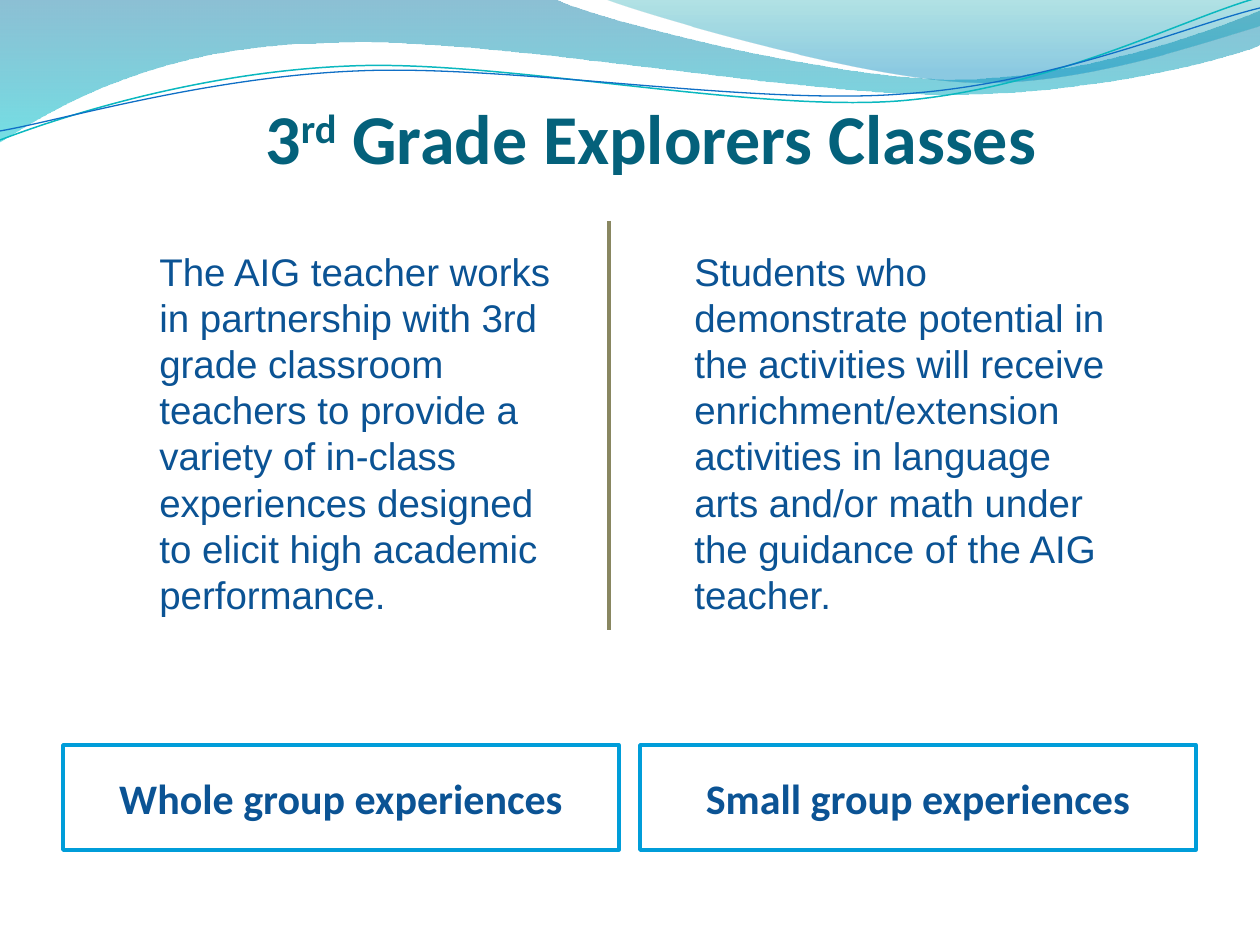
from pptx import Presentation, util as u
from pptx.dml.color import RGBColor
from pptx.enum import shapes, text
from pptx.oxml import parse_xml
from pptx.oxml.ns import nsdecls, qn

# Content
TITLE = [("3", 0), ("rd", 30), (" Grade Explorers Classes", 0)]
COLUMNS = [
    (147, 420, "The AIG teacher works in partnership with 3rd grade classroom teachers "
               "to provide a variety of in-class experiences designed to elicit high "
               "academic performance."),
    (682, 441, "Students who demonstrate potential in the activities will receive "
               "enrichment/extension activities in language arts and/or math under "
               "the guidance of the AIG teacher."),
]
GROUPS = ["Whole group experiences", "Small group experiences"]

COLORS = {"title": "04617B", "text": "0B5394", "box": "FFFFFF", "border": "009DD9",
          "divider": "898761", "teal": "0AB8BF", "blue": "0F6FC6",
          "wave_top": "0074A1", "wave_bottom": "00C6CF",
          "corner_top": "00A1A9", "corner_bottom": "008BBF"}

# Outlines in px: a pair is a straight step, six numbers are a Bezier curve
WAVES = [
    ([(0, 0), (554, -1), (600, 21, 837, 79, 955, 79), (1074, 79, 1207, 33, 1260, 11),
      (1261, 45), (1239, 55, 1096, 96, 940, 94), (784, 94, 481, 35, 324, 43),
      (163, 45, 58, 105, -1, 142)],
     [(0, "wave_top", 45), (1, "wave_bottom", 55)]),
    ([(604, -1), (641, 14, 859, 78, 969, 82), (1079, 87, 1211, 40, 1260, 26), (1260, 0)],
     [(0, "corner_top", 30), (0.8, "corner_bottom", 45)]),
]
STRANDS = [
    ([(0, 140), (60, 117, 199, 72, 349, 66), (498, 59, 747, 112, 898, 101),
      (1050, 89, 1182, 19, 1257, -2)], "teal", 0.85),
    ([(0, 131), (59, 121, 207, 77, 357, 71), (508, 64, 752, 106, 903, 94),
      (1053, 84, 1186, 26, 1260, 8)], "blue", 0.75),
]

# Grid in px
WIDTH, HEIGHT = 1260, 945
MARGIN, GAP = 63, 21
BOX_TOP, BOX_HEIGHT = 745, 105
BOX_WIDTH = (WIDTH - 2 * MARGIN - GAP) // 2


def px(value):
    return u.Emu(round(value * 914400 / 126))


def color(name):
    return RGBColor.from_string(COLORS[name])


def add_outline(outline, close):
    points = [(px(step[i]), px(step[i + 1]))
              for step in outline for i in range(0, len(step), 2)]
    builder = slide.shapes.build_freeform(*points[0])
    builder.add_line_segments(points[1:], close=close)
    shape = builder.convert_to_shape()
    shape.shadow.inherit = False
    # Join each three points of a curved step into one Bezier segment
    segments = iter(list(shape._element.spPr.iter(qn("a:lnTo"))))
    for step in outline[1:]:
        first = next(segments)
        if len(step) == 6:
            first.tag = qn("a:cubicBezTo")
            for _ in range(2):
                extra = next(segments)
                first.append(extra[0])
                extra.getparent().remove(extra)
    return shape


def style_line(line, name, width):
    line.color.rgb = color(name)
    line.width = u.Pt(width)


def style_run(run, font, size, name, bold=False):
    run.font.name = font
    run.font.size = u.Pt(size)
    run.font.bold = bold
    run.font.color.rgb = color(name)


presentation = Presentation()
presentation.slide_width, presentation.slide_height = px(WIDTH), px(HEIGHT)
slide = presentation.slides.add_slide(presentation.slide_layouts[5])
title = slide.shapes.title

# Waves across the top
for outline, stops in WAVES:
    wave = add_outline(outline, close=True)
    wave.line.fill.background()
    wave.fill.gradient()
    wave.fill.gradient_angle = 270
    for stop, (position, name, _) in zip(wave.fill.gradient_stops, stops):
        stop.position = position
        stop.color.rgb = color(name)
    for element, (_, _, opacity) in zip(wave._element.spPr.iter(qn("a:srgbClr")), stops):
        element.append(parse_xml(f'<a:alpha {nsdecls("a")} val="{opacity * 1000}"/>'))

for outline, name, width in STRANDS:
    strand = add_outline(outline, close=False)
    strand.fill.background()
    style_line(strand.line, name, width)

# Title
title.left, title.top, title.width, title.height = px(147), px(53), px(1008), px(126)
frame = title.text_frame
frame.auto_size = text.MSO_AUTO_SIZE.NONE
frame.vertical_anchor = text.MSO_ANCHOR.BOTTOM
frame.margin_left = frame.margin_right = frame.margin_bottom = 0
frame.paragraphs[0].alignment = text.PP_ALIGN.CENTER
for words, baseline in TITLE:
    run = frame.paragraphs[0].add_run()
    run.text = words
    style_run(run, "Calibri", 40, "title", bold=True)
    if baseline:
        run._r.get_or_add_rPr().set("baseline", str(baseline * 1000))

# Two text columns
for left, width, words in COLUMNS:
    column = slide.shapes.add_textbox(px(left), px(241.5), px(width), px(386))
    column.text_frame.word_wrap = True
    column.text_frame.text = words
    style_run(column.text_frame.paragraphs[0].runs[0], "Arial", 22, "text")

# Divider between the columns
divider = slide.shapes.add_connector(
    shapes.MSO_CONNECTOR.STRAIGHT, px(609), px(221), px(609), px(630))
style_line(divider.line, "divider", 2)
divider._element.spPr.append(parse_xml(f'<a:effectLst {nsdecls("a")}/>'))

# Group boxes
for index, words in enumerate(GROUPS):
    box = slide.shapes.add_shape(
        shapes.MSO_SHAPE.RECTANGLE, px(MARGIN + index * (BOX_WIDTH + GAP)), px(BOX_TOP),
        px(BOX_WIDTH), px(BOX_HEIGHT))
    box.shadow.inherit = False
    box.fill.solid()
    box.fill.fore_color.rgb = color("box")
    style_line(box.line, "border", 2)
    box.text_frame.text = words
    box.text_frame.vertical_anchor = text.MSO_ANCHOR.MIDDLE
    paragraph = box.text_frame.paragraphs[0]
    paragraph.alignment = text.PP_ALIGN.CENTER
    style_run(paragraph.runs[0], "Calibri", 24, "text", bold=True)

presentation.save("out.pptx")
